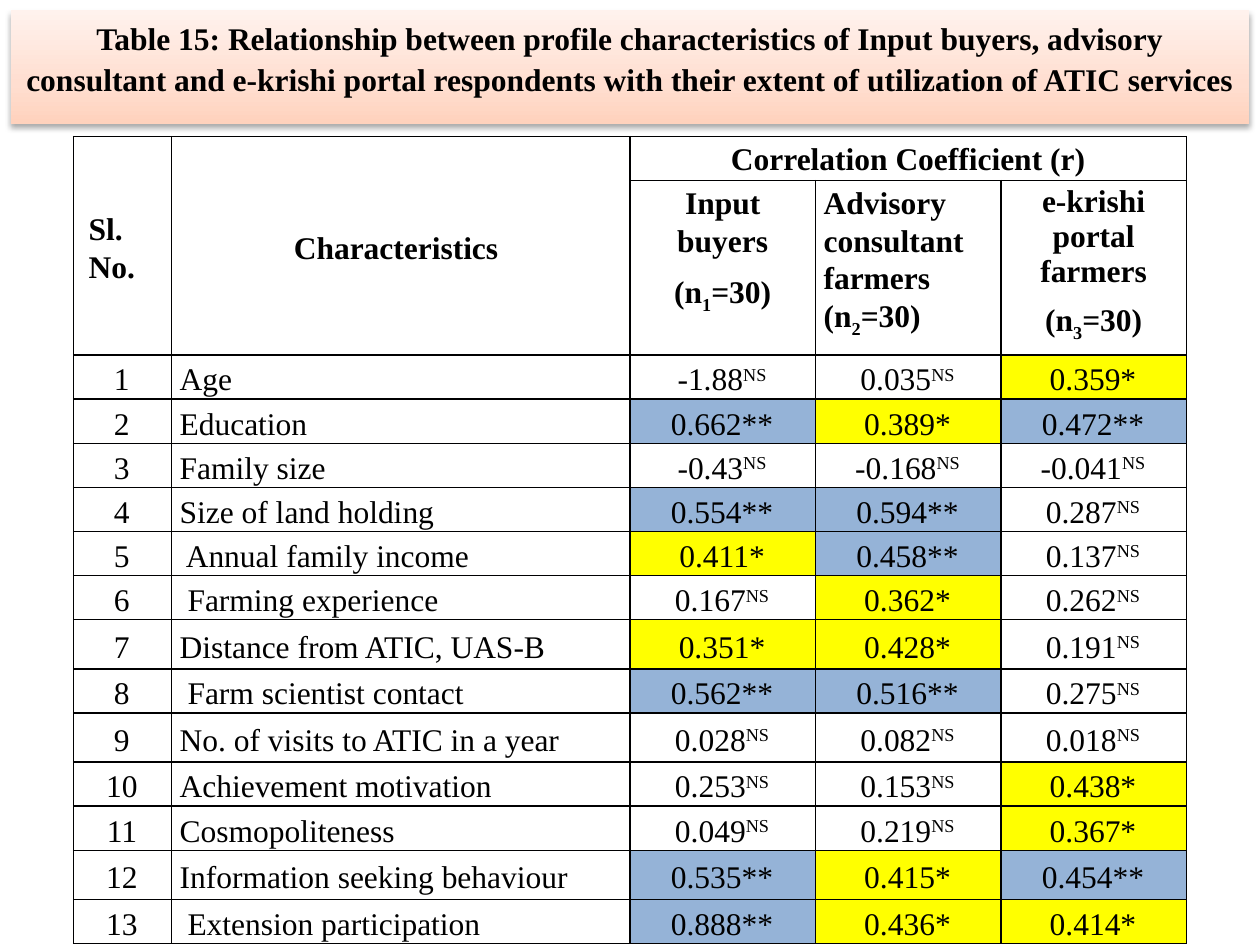
from lxml import etree
from pptx import Presentation
from pptx.dml.color import RGBColor
from pptx.enum.text import MSO_ANCHOR, MSO_AUTO_SIZE, PP_ALIGN
from pptx.oxml import parse_xml
from pptx.oxml.ns import nsdecls, qn
from pptx.util import Pt

FONT = "Times New Roman"
BLACK = RGBColor(0x00, 0x00, 0x00)
YELLOW = RGBColor(0xFF, 0xFF, 0x00)
BLUE = RGBColor(0x95, 0xB3, 0xD7)
BORDER = RGBColor(0x00, 0x00, 0x01)
BANNER_STOPS = [
    (0, RGBColor(0xFF, 0xD2, 0xBD)),
    (35, RGBColor(0xFF, 0xDE, 0xD0)),
    (100, RGBColor(0xFF, 0xF2, 0xED)),
]
SUB, SUPER = -25000, 30000
CENTER, LEFT = PP_ALIGN.CENTER, PP_ALIGN.LEFT

CORRELATIONS = [
    ("Age", "-1.88", "0.035", "0.359*"),
    ("Education", "0.662**", "0.389*", "0.472**"),
    ("Family size", "-0.43", "-0.168", "-0.041"),
    ("Size of land holding", "0.554**", "0.594**", "0.287"),
    (" Annual family income", "0.411*", "0.458**", "0.137"),
    (" Farming experience", "0.167", "0.362*", "0.262"),
    ("Distance from ATIC, UAS-B", "0.351*", "0.428*", "0.191"),
    (" Farm scientist contact", "0.562**", "0.516**", "0.275"),
    ("No. of visits to ATIC in a year", "0.028", "0.082", "0.018"),
    ("Achievement motivation", "0.253", "0.153", "0.438*"),
    ("Cosmopoliteness", "0.049", "0.219", "0.367*"),
    ("Information seeking behaviour", "0.535**", "0.415*", "0.454**"),
    (" Extension participation", "0.888**", "0.436*", "0.414*"),
]
TALL = {7, 9, 12}


def format_paragraph(paragraph, runs, align, bold, spacing=1.07):
    paragraph.alignment = align
    paragraph.line_spacing = spacing
    paragraph.space_before = Pt(0)
    paragraph.space_after = Pt(8)
    font = paragraph.font
    font.name, font.size, font.bold = FONT, Pt(18), bold
    font.color.rgb = BLACK
    for text, baseline in runs:
        run = paragraph.add_run()
        run.text = text
        if baseline:
            run.font._element.set("baseline", str(baseline))


def write_cell(cell, paragraphs, align=CENTER, bold=False,
               anchor=MSO_ANCHOR.MIDDLE, spacing=1.07, indent=0.0):
    cell.vertical_anchor = anchor
    cell.margin_left = Pt(4.7 + indent)
    for number, runs in enumerate(paragraphs):
        frame = cell.text_frame
        paragraph = frame.add_paragraph() if number else frame.paragraphs[0]
        format_paragraph(paragraph, runs, align, bold, spacing)


presentation = Presentation()
presentation.slide_width, presentation.slide_height = Pt(720), Pt(540)
slide = presentation.slides.add_slide(presentation.slide_layouts[5])

# Title banner with gradient and soft shadow
banner = slide.shapes.title
banner.left, banner.top, banner.width, banner.height = Pt(6), Pt(5.8), Pt(708), Pt(65)
banner.text_frame.word_wrap = True
banner.text_frame.auto_size = MSO_AUTO_SIZE.NONE
banner.text_frame.vertical_anchor = MSO_ANCHOR.TOP
format_paragraph(
    banner.text_frame.paragraphs[0],
    [("Table 15: Relationship between profile characteristics of Input buyers, "
      "advisory consultant and e-krishi portal respondents with their extent "
      "of utilization of ATIC services ", 0)],
    CENTER, True)
stops = "".join(
    f'<a:gs pos="{position * 1000}"><a:srgbClr val="{color}"/></a:gs>'
    for position, color in BANNER_STOPS)
for xml in (
    f'<a:prstGeom {nsdecls("a")} prst="rect"><a:avLst/></a:prstGeom>',
    f'<a:gradFill {nsdecls("a")} rotWithShape="1"><a:gsLst>{stops}</a:gsLst>'
    '<a:lin ang="16200000" scaled="0"/></a:gradFill>',
    f'<a:effectLst {nsdecls("a")}><a:outerShdw blurRad="{Pt(3.5)}" '
    f'dist="{Pt(2.2)}" dir="5400000" rotWithShape="0"><a:srgbClr val="{BLACK}">'
    '<a:alpha val="32000"/></a:srgbClr></a:outerShdw></a:effectLst>',
):
    banner._element.spPr.append(parse_xml(xml))

# Table grid
widths = [56, 262, 106, 106, 106]
heights = [25.2, 99.7] + [28.1 if number in TALL else 25.2
                          for number in range(1, len(CORRELATIONS) + 1)]
table = slide.shapes.add_table(
    len(heights), len(widths), Pt(42), Pt(78),
    Pt(sum(widths)), Pt(sum(heights))).table
table.first_row = table.horz_banding = False
for column, width in zip(table.columns, widths):
    column.width = Pt(width)
for row, height in zip(table.rows, heights):
    row.height = Pt(height)

# Plain cells with thin borders
for cell in table.iter_cells():
    cell.margin_top, cell.margin_right, cell.margin_bottom = Pt(2.2), Pt(5.4), Pt(0)
    cell.fill.background()
    properties = cell._tc.get_or_add_tcPr()
    for position, side in enumerate(("lnL", "lnR", "lnT", "lnB")):
        line = etree.Element(qn(f"a:{side}"), w=str(Pt(1)))
        solid = etree.SubElement(line, qn("a:solidFill"))
        etree.SubElement(solid, qn("a:srgbClr"), val=str(BORDER))
        properties.insert(position, line)

# Header
table.cell(0, 0).merge(table.cell(1, 0))
table.cell(0, 1).merge(table.cell(1, 1))
table.cell(0, 2).merge(table.cell(0, 4))
write_cell(table.cell(0, 0), [[("Sl. No.", 0)]], LEFT, True, indent=4)
write_cell(table.cell(0, 1), [[("Characteristics ", 0)]], CENTER, True)
write_cell(table.cell(0, 2), [[("Correlation Coefficient (r)", 0)]],
           CENTER, True, MSO_ANCHOR.TOP, indent=0.7)
write_cell(table.cell(1, 2),
           [[("Input buyers", 0)], [("(n", 0), ("1", SUB), ("=30)", 0)]],
           CENTER, True, MSO_ANCHOR.TOP, indent=0.7)
write_cell(table.cell(1, 3),
           [[("Advisory consultant farmers (n", 0), ("2", SUB), ("=30)", 0)]],
           LEFT, True, MSO_ANCHOR.TOP)
write_cell(table.cell(1, 4),
           [[("e-krishi portal farmers", 0)], [("(n", 0), ("3", SUB), ("=30)", 0)]],
           CENTER, True, MSO_ANCHOR.TOP, spacing=1.0, indent=0.7)

# Body: stars mark significance, NS marks the rest
for number, (characteristic, *coefficients) in enumerate(CORRELATIONS, start=1):
    row = number + 1
    write_cell(table.cell(row, 0), [[(str(number), 0)]])
    write_cell(table.cell(row, 1), [[(characteristic, 0)]], LEFT)
    for column, coefficient in enumerate(coefficients, start=2):
        cell = table.cell(row, column)
        if coefficient.endswith("*"):
            write_cell(cell, [[(coefficient, 0)]])
            cell.fill.solid()
            cell.fill.fore_color.rgb = BLUE if coefficient.endswith("**") else YELLOW
        else:
            write_cell(cell, [[(coefficient, 0), ("NS", SUPER)]])

presentation.save("out.pptx")
